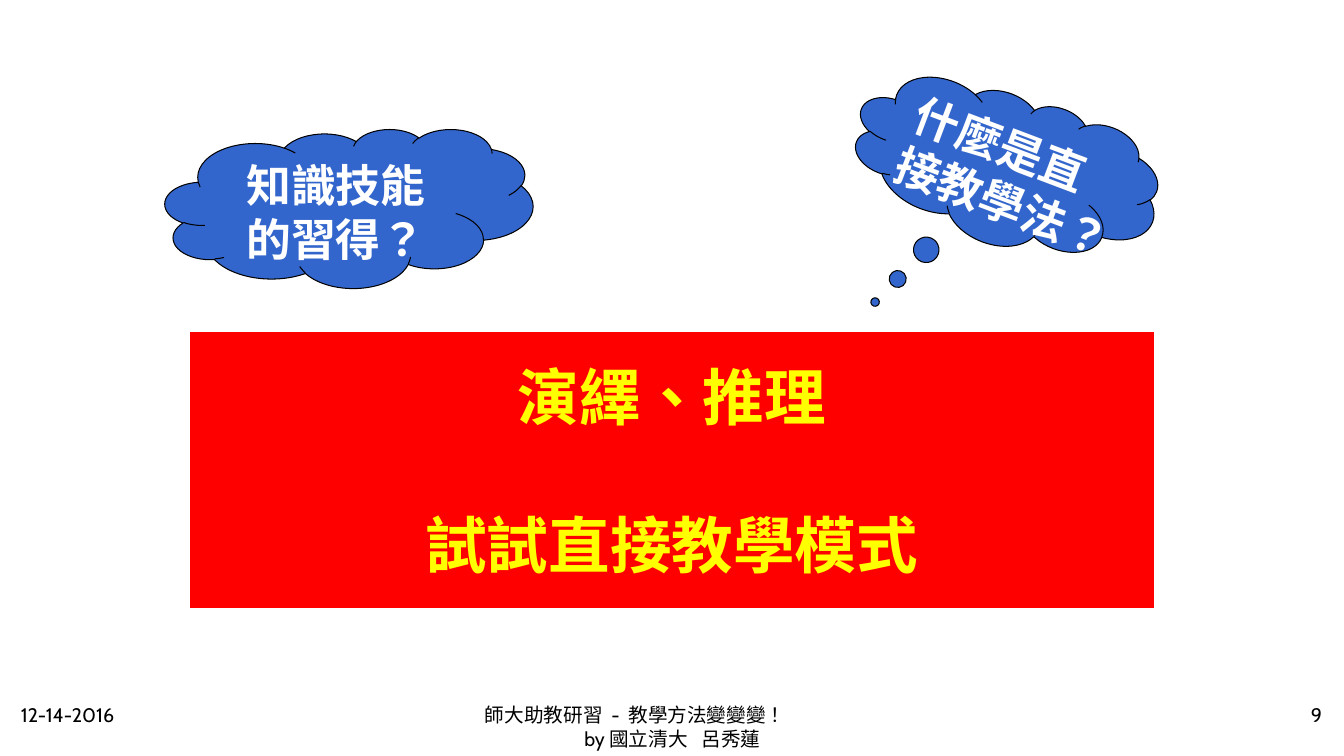
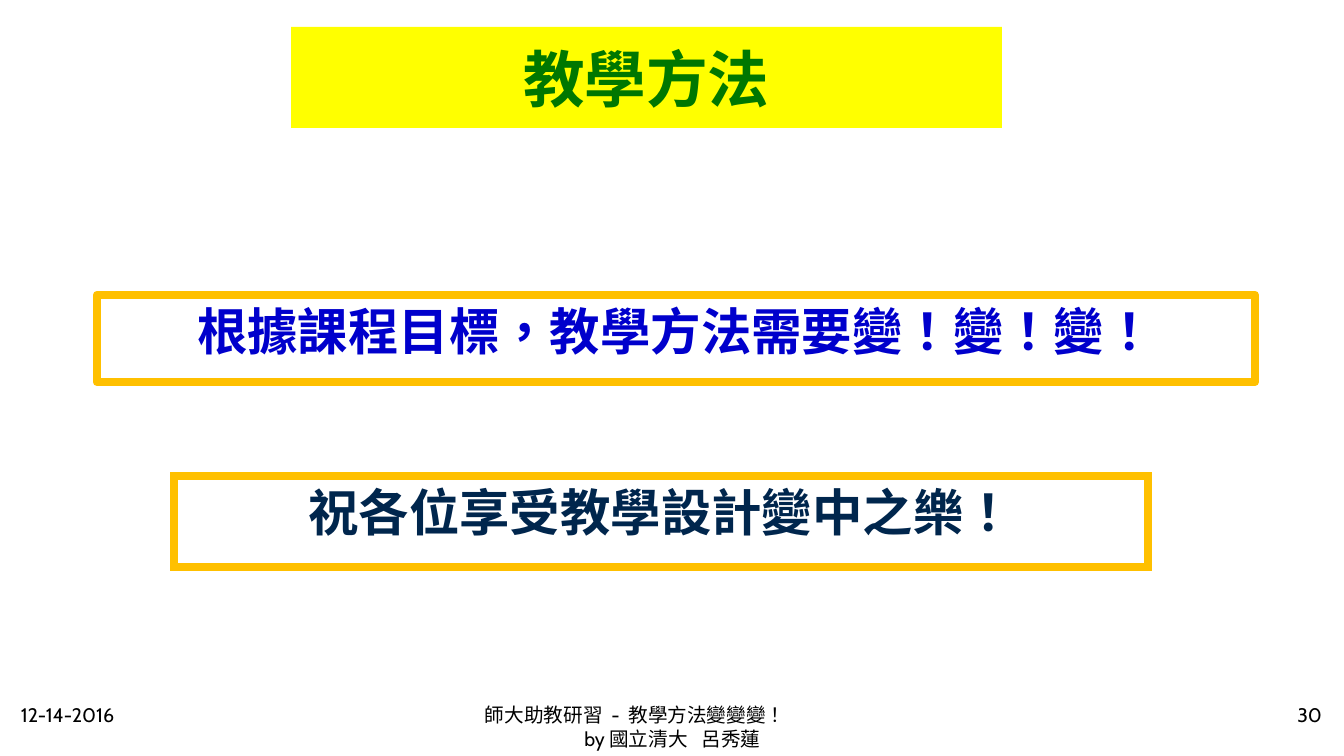
"""Builds two slides on choosing teaching methods."""
from lxml import etree
from pptx import Presentation
from pptx import util as u
from pptx.dml.color import RGBColor
from pptx.enum import shapes, text
from pptx.oxml.ns import qn

PX = 914400 / 100.8
BLACK = RGBColor(0, 0, 0)
WHITE = RGBColor(255, 255, 255)
RED = RGBColor(255, 0, 0)
YELLOW = RGBColor(255, 255, 0)
GREEN = RGBColor(0, 0x77, 0)
CLOUD_BLUE = RGBColor(0x33, 0x66, 0xCC)
BLUE = RGBColor(0, 0, 0xCC)
NAVY = RGBColor(0, 0x26, 0x4D)
GOLD = RGBColor(0xFF, 0xC0, 0)
LEFT, CENTER, RIGHT = text.PP_ALIGN.LEFT, text.PP_ALIGN.CENTER, text.PP_ALIGN.RIGHT
TOP, MIDDLE = text.MSO_ANCHOR.TOP, text.MSO_ANCHOR.MIDDLE


def place(sp, *box):
    sp.left, sp.top, sp.width, sp.height = [u.Emu(round(v * PX)) for v in box]


def write(sp, lines, size, color, align=CENTER, anchor=TOP, font="Cabin", bold=True, gap=0):
    tf = sp.text_frame
    tf.word_wrap = True
    tf.auto_size = text.MSO_AUTO_SIZE.NONE
    tf.vertical_anchor = anchor
    for i, runs in enumerate(lines):
        p = tf.paragraphs[0] if i == 0 else tf.add_paragraph()
        p.alignment = align
        p.space_before = u.Pt(gap if i else 0)
        for words in runs:
            r = p.add_run()
            r.text = words
            r.font.name, r.font.size, r.font.bold = font, u.Pt(size), bold
            r.font.color.rgb = color
            r.font._element.set("lang", "zh-TW")
    return tf


prs = Presentation()
prs.slide_width, prs.slide_height = round(1344 * PX), round(756 * PX)

titles = [
    ("9", 5, (190, 332, 964, 276), RED, YELLOW, [["演繹、推理"], ["試試直接教學模式"]]),
    ("30", 1, (291, 27, 711, 101), YELLOW, GREEN, [["教學方法"]]),
]
footer = [["師大助教研習", " ", "-", " ", "教學方法變變變！"], ["by 國立清大", " ", "呂秀蓮"]]
for number, layout, box, fill, color, lines in titles:
    s = prs.slides.add_slide(prs.slide_layouts[layout])
    sp = s.shapes.title
    place(sp, *box)
    sp.fill.solid()
    sp.fill.fore_color.rgb = fill
    write(sp, lines, 44, color, anchor=MIDDLE, gap=53)

    for left, width, align, lines in [
        (11, 280, LEFT, [["12-14-2016"]]),
        (460, 425, CENTER, footer),
        (1052, 280, RIGHT, [[number]]),
    ]:
        sp = s.shapes.add_textbox(0, 0, 0, 0)
        place(sp, left, 698, width, 50)
        tf = write(sp, lines, 14, BLACK, align, bold=False)
        if lines is footer:
            tf.paragraphs[0].alignment = LEFT
            tf.paragraphs[0]._p.get_or_add_pPr().set("marL", str(round(15 * PX)))
            for p, spacing in zip(tf.paragraphs, (300, 670)):
                for r in p.runs:
                    if r.text == " ":
                        r.font._element.set("spc", str(spacing))

question_slide, closing_slide = prs.slides

for shape, box, rotation, font, align, words in [
    (shapes.MSO_SHAPE.CLOUD_CALLOUT, (850, 92, 312, 153), 20.8, "Arial", LEFT, "什麼是直接教學法？"),
    (shapes.MSO_SHAPE.CLOUD, (165, 129, 368, 159), 0, "Cabin", CENTER, "知識技能的習得？"),
]:
    sp = question_slide.shapes.add_shape(shape, 0, 0, 0, 0)
    place(sp, *box)
    sp.rotation = rotation
    sp.shadow.inherit = False
    sp.fill.solid()
    sp.fill.fore_color.rgb = CLOUD_BLUE
    sp.line.color.rgb = BLACK
    sp.line.width = u.Pt(0.75)
    if shape == shapes.MSO_SHAPE.CLOUD_CALLOUT:
        sp.adjustments[0], sp.adjustments[1] = -0.24, 1.12
    write(sp, [[words]], 32, WHITE, align, font=font)

body = closing_slide.placeholders[1]
pPr = body.text_frame.paragraphs[0]._p.get_or_add_pPr()
pPr.set("marL", "0")
pPr.set("indent", "0")
etree.SubElement(pPr, qn("a:buNone"))
wish = closing_slide.shapes.add_shape(shapes.MSO_SHAPE.RECTANGLE, 0, 0, 0, 0)
wish.shadow.inherit = False
for sp, box, join, color, words in [
    (body, (97, 295, 1158, 87), "round", BLUE, "根據課程目標，教學方法需要變！變！變！"),
    (wish, (174, 476, 974, 91), "miter", NAVY, "祝各位享受教學設計變中之樂！"),
]:
    place(sp, *box)
    sp.fill.background()
    sp.line.color.rgb = GOLD
    sp.line.width = u.Pt(6)
    etree.SubElement(sp.line._get_or_add_ln(), qn("a:" + join))
    write(sp, [[words]], 36, color)

prs.save("out.pptx")
